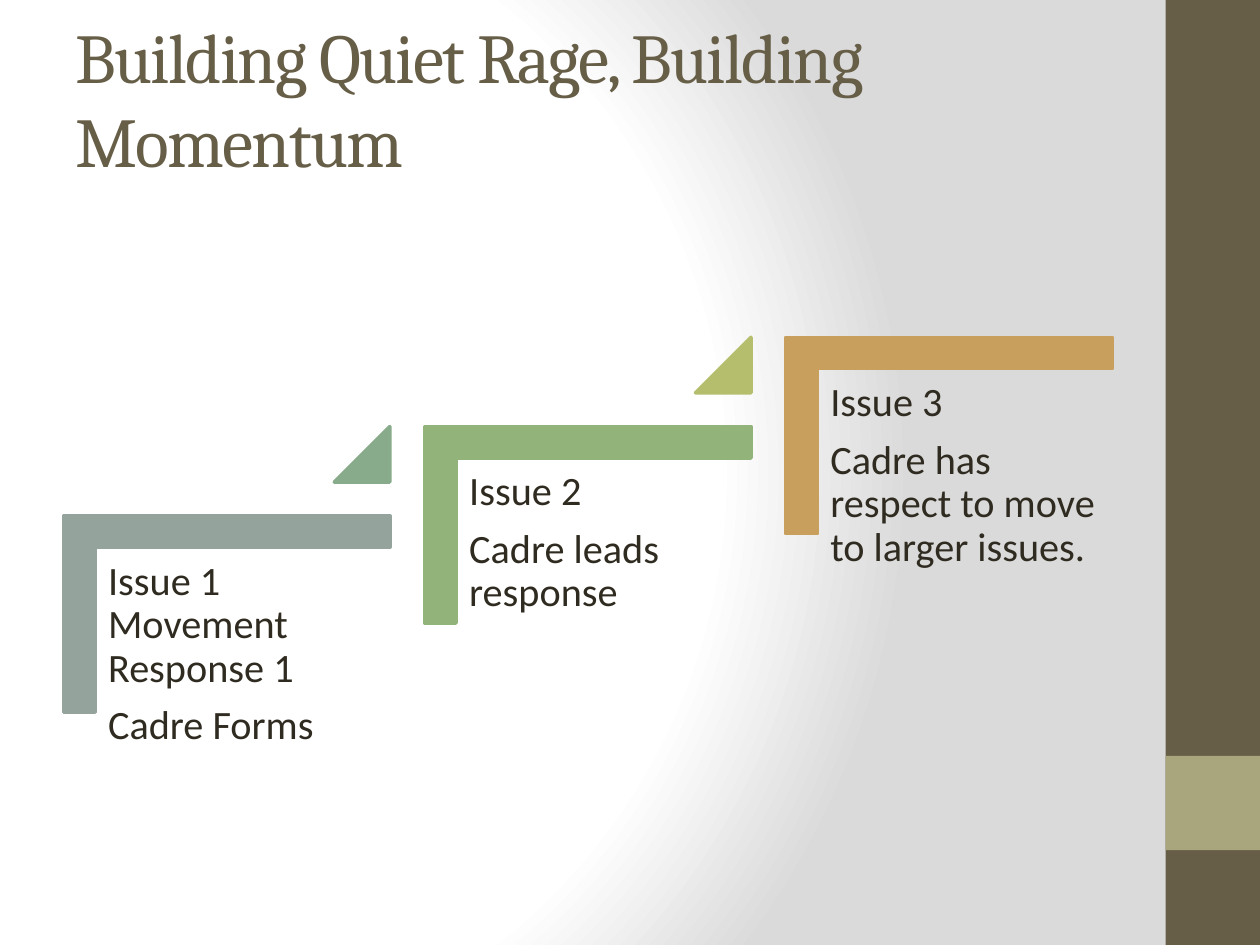
from lxml.etree import fromstring
from pptx import Presentation
from pptx.dml.color import RGBColor
from pptx.enum.shapes import MSO_SHAPE
from pptx.enum.text import MSO_ANCHOR, PP_ALIGN
from pptx.oxml.ns import qn
from pptx.util import Cm, Pt

NS = "http://schemas.openxmlformats.org/drawingml/2006/main"
WIDE, HIGH = 25.4, 19.05
TITLE = {"size": Pt(40), "name": "Cambria"}
BODY = {"size": Pt(23), "name": "Calibri"}
PARA = {"line_spacing": 0.9, "space_after": Pt(8), "alignment": PP_ALIGN.LEFT}
INSET = {"margin_left": Cm(0.25), "margin_right": Cm(0.25),
         "margin_top": Cm(0.25), "margin_bottom": Cm(0.25), "word_wrap": True}
# Each step: bar colour, triangle colour, paragraphs
STEPS = [
    ("95A39D", "88AB8B", ["Issue 1 Movement Response 1", "Cadre Forms"]),
    ("92B47A", "B5BE6C", ["Issue 2", "Cadre leads response"]),
    ("C89F5D", None, ["Issue 3", "Cadre has respect to move to larger issues."]),
]


def rgb(code):
    return RGBColor.from_string(code)


def apply(part, values):
    for name, value in values.items():
        setattr(part, name, value)


def add_block(slide, kind, box, color, edge=True):
    block = slide.shapes.add_shape(kind, *map(Cm, box))
    block.shadow.inherit = False
    block.fill.solid()
    block.fill.fore_color.rgb = rgb(color)
    if edge:
        block.line.color.rgb = rgb(color)
        block.line.width = Pt(2)
    else:
        block.line.fill.background()
    return block


def add_back(slide):
    """Radial gradient, white at the left."""
    slide.background.fill.gradient()
    old = slide.element.find(".//" + qn("a:gradFill"))
    stops = "".join(
        f'<a:gs pos="{pos}000"><a:srgbClr val="{code}"/></a:gs>'
        for pos, code in [(0, "FFFFFF"), (75, "FFFFFF"), (100, "DADADA")])
    new = fromstring(
        f'<a:gradFill xmlns:a="{NS}" rotWithShape="1"><a:gsLst>{stops}</a:gsLst>'
        '<a:path path="circle"><a:fillToRect l="20000" t="50000" r="100000" '
        'b="50000"/></a:path></a:gradFill>')
    old.getparent().replace(old, new)


def add_side(slide, left, top, width, height):
    """Dark band with a light square on it."""
    rect = MSO_SHAPE.RECTANGLE
    add_block(slide, rect, (left, top, width, height), "675E47", False)
    add_block(slide, rect, (left, top + height * 0.8, width, width), "A9A57C", False)


def add_title(slide, left, top, width, height):
    title = slide.shapes.title
    apply(title, {"left": Cm(left), "top": Cm(top),
                  "width": Cm(width), "height": Cm(height)})
    frame = title.text_frame
    frame.text = "Building Quiet Rage, Building Momentum"
    apply(frame, {"vertical_anchor": MSO_ANCHOR.MIDDLE, "word_wrap": True})
    para = frame.paragraphs[0]
    para.alignment = PP_ALIGN.LEFT
    font = para.runs[0].font
    apply(font, TITLE)
    font.color.rgb = rgb("675E47")
    para.runs[0]._r.get_or_add_rPr().set("spc", "-100")


def add_step(slide, left, top, width, height, step):
    color, accent, lines = step
    # Corner bar, turned a quarter about its middle
    shift = (width - height) / 2
    bar = add_block(slide, MSO_SHAPE.CORNER,
                    (left + shift, top - shift, height, width), color)
    bar.rotation = 90
    bar.adjustments[0] = bar.adjustments[1] = 0.16
    # Text under the bar
    text = slide.shapes.add_textbox(Cm(left + 0.65), Cm(top + 0.65), Cm(5.94), Cm(5.2))
    frame = text.text_frame
    apply(frame, INSET)
    for index, line in enumerate(lines):
        para = frame.add_paragraph() if index else frame.paragraphs[0]
        apply(para, PARA)
        run = para.add_run()
        run.text = line
        apply(run.font, BODY)
        run.font.color.rgb = rgb("2F2B20")
    # Triangle leading up to the next step
    if accent:
        side = 1.12
        tip = add_block(slide, MSO_SHAPE.ISOSCELES_TRIANGLE,
                        (left + width - side, top - 1.8, side, side), accent)
        tip.adjustments[0] = 1


def main():
    deck = Presentation()
    apply(deck, {"slide_width": Cm(WIDE), "slide_height": Cm(HIGH)})
    slide = deck.slides.add_slide(deck.slide_layouts[5])
    add_back(slide)
    add_side(slide, 23.5, 0, 1.9, HIGH)
    add_title(slide, 1.27, 0.76, 21.16, 2.41)
    for index, step in enumerate(STEPS):
        add_step(slide, 1.28 + 7.28 * index, 10.4 - 1.8 * index, 6.58, 3.96, step)
    deck.save("out.pptx")


if __name__ == "__main__":
    main()
